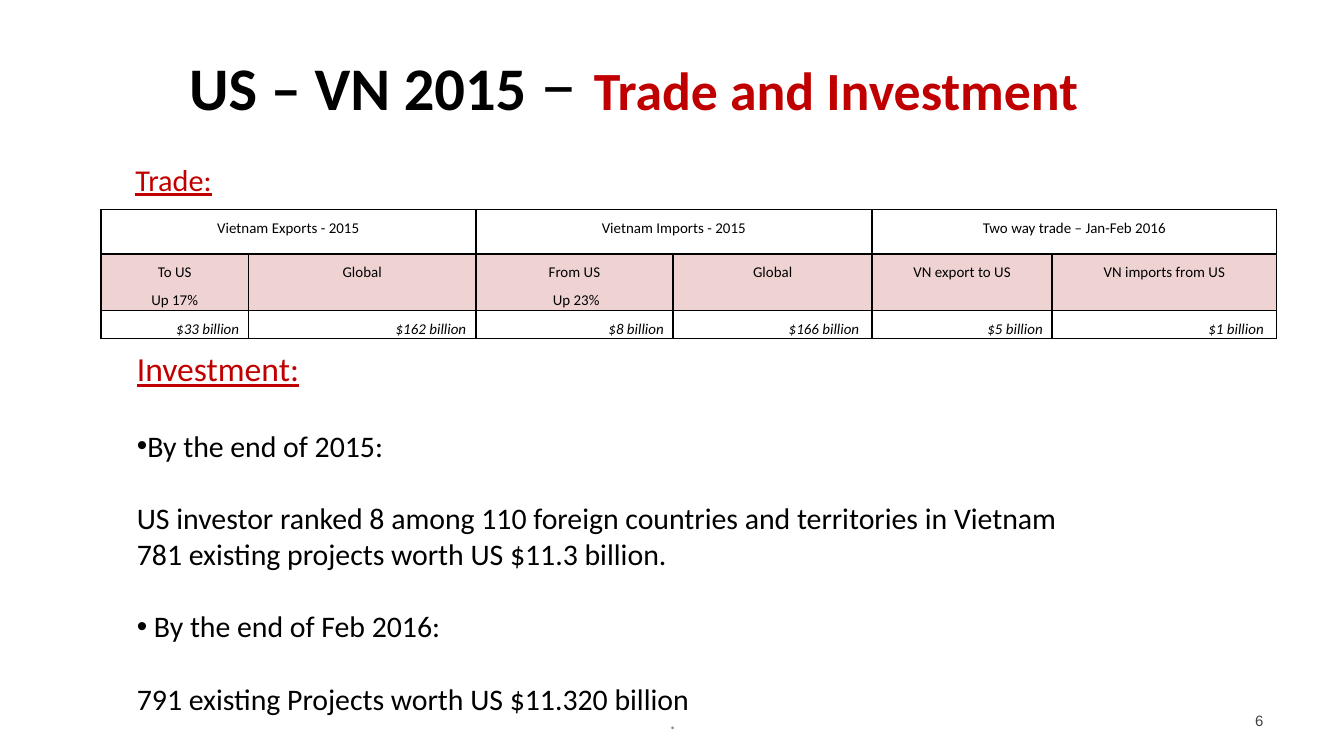
from lxml import etree
from pptx import Presentation
from pptx.dml.color import RGBColor
from pptx.enum import text
from pptx.oxml import ns
from pptx.util import Inches, Pt

BLACK = RGBColor(0x00, 0x00, 0x00)
WHITE = RGBColor(0xFF, 0xFF, 0xFF)
RED = RGBColor(0xC0, 0x00, 0x00)
PINK = RGBColor(0xEF, 0xD3, 0xD2)
GRAY = RGBColor(0x8C, 0x8C, 0x8C)
DARK_GRAY = RGBColor(0x40, 0x41, 0x43)

CENTER, RIGHT = text.PP_ALIGN.CENTER, text.PP_ALIGN.RIGHT
TOP, MIDDLE = text.MSO_ANCHOR.TOP, text.MSO_ANCHOR.MIDDLE

COLUMN_WIDTHS = (1.1, 1.69, 1.47, 1.48, 1.34, 1.67)
ROW_HEIGHTS = (0.33, 0.42, 0.21)
GROUPS = ("Vietnam Exports - 2015", "Vietnam Imports - 2015", "Two way trade – Jan-Feb 2016")
PARTNERS = ("To US\nUp 17%", "Global", "From US\n Up 23%", "Global",
            "VN export to US", "VN imports from US")
AMOUNTS = ("$33 billion", "$162 billion", "$8 billion", "$166 billion ",
           "$5 billion", "$1 billion ")

# Wording, space before in points, bulleted
INVESTMENT_LINES = (
    ("By the end of 2015:", 21, True),
    ("US investor ranked 8 among 110 foreign countries and territories in Vietnam", 19.5, False),
    ("781 existing projects worth US $11.3 billion.", 0, False),
    (" By the end of Feb 2016:", 19.5, True),
    ("791 existing Projects worth US $11.320 billion", 19.5, False),
)


def add_box(page, left, top, width, height, anchor=MIDDLE):
    box = page.shapes.add_textbox(Inches(left), Inches(top), Inches(width), Inches(height))
    box.text_frame.word_wrap = True
    box.text_frame.vertical_anchor = anchor
    return box.text_frame


def add_span(para, words, size, color=BLACK, font="Calibri", **styles):
    span = para.add_run()
    span.text = words
    span.font.name = font
    span.font.size = Pt(size)
    span.font.color.rgb = color
    for style, value in styles.items():
        setattr(span.font, style, value)


def add_bullet(para):
    properties = para._p.get_or_add_pPr()
    etree.SubElement(properties, ns.qn("a:buFont"), typeface="Arial")
    etree.SubElement(properties, ns.qn("a:buChar"), char="•")


def indent(para, inches):
    para._p.get_or_add_pPr().set("marL", str(Inches(inches)))


def add_heading(page):
    frame = add_box(page, 0.5, 0.22, 9, 1.27, TOP)
    title = frame.paragraphs[0]
    indent(title, 0.81)
    add_span(title, "US – VN 2015 ", 32.4, bold=True)
    add_span(title, "– ", 39.6)
    add_span(title, "Trade and Investment", 28.8, RED, bold=True)
    trade = frame.add_paragraph()
    indent(trade, 0.41)
    trade.space_before = Pt(19.5)
    add_span(trade, "Trade:", 16.2, RED, underline=True)


def add_borders(cell):
    properties = cell._tc.get_or_add_tcPr()
    for position, side in enumerate(("lnL", "lnR", "lnT", "lnB")):
        line = etree.Element(ns.qn("a:" + side), w=str(Pt(1)))
        fill = etree.SubElement(line, ns.qn("a:solidFill"))
        etree.SubElement(fill, ns.qn("a:srgbClr"), val=str(BLACK))
        properties.insert(position, line)


def fill_cell(cell, words, align, anchor, italic):
    cell.vertical_anchor = anchor
    para = cell.text_frame.paragraphs[0]
    para.alignment = align
    para.line_spacing = Pt(15)
    for number, line in enumerate(words.split("\n")):
        if number:
            para.add_line_break()
        add_span(para, line, 8, italic=italic)


def add_trade_table(page):
    table = page.shapes.add_table(
        len(ROW_HEIGHTS), len(COLUMN_WIDTHS), Inches(0.75), Inches(1.56),
        Inches(sum(COLUMN_WIDTHS)), Inches(sum(ROW_HEIGHTS))).table
    for column, width in zip(table.columns, COLUMN_WIDTHS):
        column.width = Inches(width)
    for row, height, color in zip(table.rows, ROW_HEIGHTS, (WHITE, PINK, WHITE)):
        row.height = Inches(height)
        for cell in row.cells:
            cell.margin_left = cell.margin_right = Inches(0.07)
            cell.margin_top = cell.margin_bottom = 0
            cell.fill.solid()
            cell.fill.fore_color.rgb = color
            add_borders(cell)
    for number, words in enumerate(GROUPS):
        group = table.cell(0, 2 * number)
        group.merge(table.cell(0, 2 * number + 1))
        fill_cell(group, words, CENTER, TOP, False)
    for number, (partner, amount) in enumerate(zip(PARTNERS, AMOUNTS)):
        fill_cell(table.cell(1, number), partner, CENTER, TOP, False)
        fill_cell(table.cell(2, number), amount, RIGHT, MIDDLE, True)


def add_investment(page):
    frame = add_box(page, 0.92, 2.53, 8.42, 2.86)
    add_span(frame.paragraphs[0], "Investment:", 18, RED, underline=True)
    for words, gap, bulleted in INVESTMENT_LINES:
        para = frame.add_paragraph()
        if bulleted:
            add_bullet(para)
        para.space_before = Pt(gap)
        add_span(para, words, 16)


def add_footer(page, left, width, words, align, size, color, font):
    para = add_box(page, left, 5.21, width, 0.3).paragraphs[0]
    para.alignment = align
    add_span(para, words, size, color, font)


def main():
    deck = Presentation()
    deck.slide_width = Inches(10)
    deck.slide_height = deck.slide_width * 9 // 16
    page = deck.slides.add_slide(deck.slide_layouts[6])
    add_heading(page)
    add_footer(page, 3.42, 3.17, ".", CENTER, 12, GRAY, "Calibri")
    add_footer(page, 7.17, 2.33, "6", RIGHT, 8, DARK_GRAY, "Arial")
    add_trade_table(page)
    add_investment(page)
    deck.save("out.pptx")


if __name__ == "__main__":
    main()
